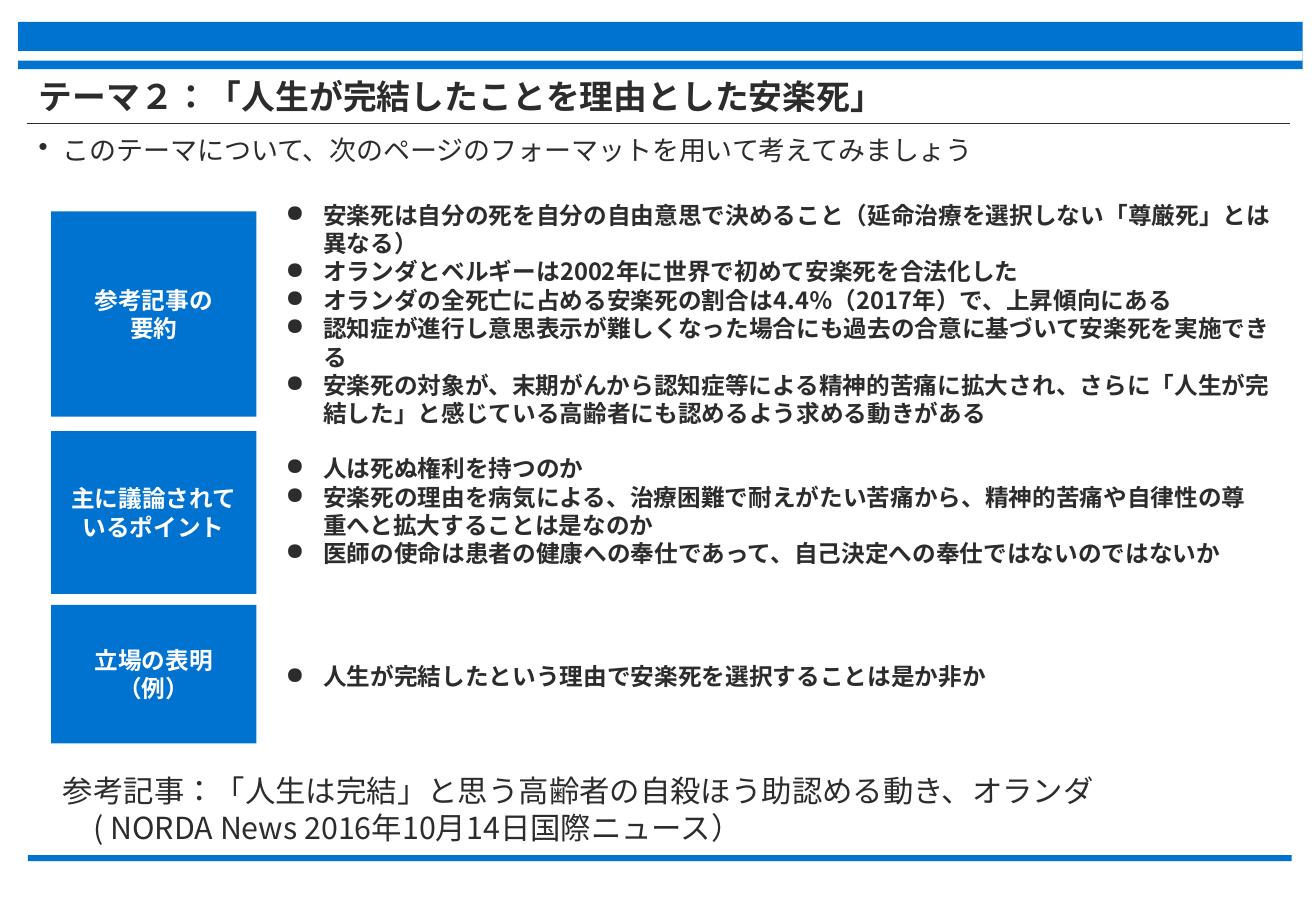
from dataclasses import dataclass

import pptx
import pptx.dml.color
import pptx.enum.lang
import pptx.enum.shapes
import pptx.enum.text
import pptx.oxml.ns
import pptx.oxml.xmlchemy
import pptx.util
from lxml import etree

BLUE = pptx.dml.color.RGBColor(0x00, 0x72, 0xCF)
WHITE = pptx.dml.color.RGBColor(0xFF, 0xFF, 0xFF)
INK = pptx.dml.color.RGBColor(0x2C, 0x2C, 0x2C)
FACE = "Noto Sans CJK JP"
SCALE = 9144  # EMU per px, 100 px to the inch

ALIGN = pptx.enum.text.PP_ALIGN
ANCHOR = pptx.enum.text.MSO_ANCHOR
qn = pptx.oxml.ns.qn


@dataclass(frozen=True)
class Box:
    left: int
    top: int
    width: int
    height: int


@dataclass(frozen=True)
class Style:
    size: int
    bold: bool = False
    color: pptx.dml.color.RGBColor = INK
    align: ALIGN = ALIGN.LEFT
    anchor: ANCHOR = ANCHOR.TOP
    inset: tuple[int, int] = (10, 5)
    bullet: str = ""
    indent: int = 0
    para: tuple[tuple[str, object], ...] = ()


@dataclass(frozen=True)
class Row:
    label: Box
    name: list[str]
    body: Box
    points: list[str]


TITLE = Style(20, True, anchor=ANCHOR.MIDDLE, para=(("line_spacing", 0.9),))
LEAD = Style(16, bullet="•", indent=20,
             para=(("line_spacing", 0.9), ("space_after", pptx.util.Pt(6))))
LABEL = Style(14, True, WHITE, ALIGN.CENTER, ANCHOR.MIDDLE, (12, 0))
POINT = Style(14, True, anchor=ANCHOR.MIDDLE, inset=(12, 0), bullet="●", indent=31)
NOTE = Style(18)

BARS = [
    (Box(23, 704, 1040, 5), BLUE),
    (Box(15, 18, 1057, 39), BLUE),
    (Box(15, 42, 1057, 8), WHITE),
]

ROWS = [
    Row(Box(42, 174, 169, 169), ["参考記事の", "要約"], Box(223, 174, 839, 169), [
        "安楽死は自分の死を自分の自由意思で決めること（延命治療を選択しない「尊厳死」とは異なる）",
        "オランダとベルギーは2002年に世界で初めて安楽死を合法化した",
        "オランダの全死亡に占める安楽死の割合は4.4％（2017年）で、上昇傾向にある",
        "認知症が進行し意思表示が難しくなった場合にも過去の合意に基づいて安楽死を実施できる",
        "安楽死の対象が、末期がんから認知症等による精神的苦痛に拡大され、"
        "さらに「人生が完結した」と感じている高齢者にも認めるよう求める動きがある",
    ]),
    Row(Box(42, 355, 169, 134), ["主に議論されているポイント"], Box(223, 355, 815, 131), [
        "人は死ぬ権利を持つのか",
        "安楽死の理由を病気による、治療困難で耐えがたい苦痛から、"
        "精神的苦痛や自律性の尊重へと拡大することは是なのか",
        "医師の使命は患者の健康への奉仕であって、自己決定への奉仕ではないのではないか",
    ]),
    Row(Box(42, 498, 169, 114), ["立場の表明（例）"], Box(223, 501, 815, 112), [
        "人生が完結したという理由で安楽死を選択することは是か非か",
    ]),
]


def px(num: int) -> pptx.util.Emu:
    return pptx.util.Emu(num * SCALE)


def area(box: Box) -> tuple[pptx.util.Emu, ...]:
    return px(box.left), px(box.top), px(box.width), px(box.height)


def apply(item: object, form: dict[str, object]) -> None:
    for key, value in form.items():
        setattr(item, key, value)


def write(shape, lines: list[str], style: Style) -> None:
    frame = shape.text_frame
    side, edge = map(px, style.inset)
    apply(frame, {
        "text": "\n".join(lines),
        "word_wrap": True,
        "auto_size": pptx.enum.text.MSO_AUTO_SIZE.NONE,
        "vertical_anchor": style.anchor,
        "margin_left": side, "margin_right": side,
        "margin_top": edge, "margin_bottom": edge,
    })
    for para in frame.paragraphs:
        apply(para, {"alignment": style.align, **dict(style.para)})
        if style.bullet:
            props = para._p.get_or_add_pPr()
            props.set("marL", str(px(style.indent)))
            props.set("indent", str(-px(style.indent)))
            etree.SubElement(props, qn("a:buChar")).set("char", style.bullet)
        for run in para.runs:
            apply(run.font, {
                "name": FACE,
                "size": pptx.util.Pt(style.size),
                "bold": style.bold,
                "language_id": pptx.enum.lang.MSO_LANGUAGE_ID.JAPANESE,
            })
            run.font.color.rgb = style.color
            east = etree.SubElement(run._r.get_or_add_rPr(), qn("a:ea"))
            east.set("typeface", FACE)


def block(slide, box: Box, color: pptx.dml.color.RGBColor):
    shape = slide.shapes.add_shape(pptx.enum.shapes.MSO_SHAPE.RECTANGLE, *area(box))
    shape.shadow.inherit = False
    shape.fill.solid()
    shape.fill.fore_color.rgb = color
    shape.line.fill.background()
    return shape


def text(slide, box: Box, lines: list[str], style: Style):
    shape = slide.shapes.add_textbox(*area(box))
    write(shape, lines, style)
    return shape


def main() -> None:
    deck = pptx.Presentation()
    apply(deck, {"slide_width": px(1083), "slide_height": px(750)})
    slide = deck.slides.add_slide(deck.slide_layouts[5])

    # Bars and the rule under the title
    for box, color in BARS:
        block(slide, box, color)
    rule = slide.shapes.add_connector(
        pptx.enum.shapes.MSO_CONNECTOR.STRAIGHT, px(22), px(102), px(1062), px(102))
    rule.line.color.rgb = INK
    rule.line.width = pptx.util.Pt(0.5)
    etree.SubElement(rule._element.spPr, qn("a:effectLst"))

    # Title and lead
    title = slide.shapes.title
    spot = area(Box(22, 61, 1040, 40))
    apply(title, dict(zip(("left", "top", "width", "height"), spot)))
    write(title, ["テーマ２：「人生が完結したことを理由とした安楽死」"], TITLE)
    text(slide, Box(22, 108, 1040, 70),
         ["このテーマについて、次のページのフォーマットを用いて考えてみましょう"], LEAD)

    # Labels with their points
    for row in ROWS:
        write(block(slide, row.label, BLUE), row.name, LABEL)
        text(slide, row.body, row.points, POINT)

    # Reference, second line set in by one character
    note = text(slide, Box(42, 631, 996, 71), [
        "参考記事：「人生は完結」と思う高齢者の自殺ほう助認める動き、オランダ",
        "( NORDA News 2016年10月14日国際ニュース）",
    ], NOTE)
    last = note.text_frame.paragraphs[-1]
    last._p.get_or_add_pPr().set("marL", str(px(25)))

    deck.save("out.pptx")


if __name__ == "__main__":
    main()
